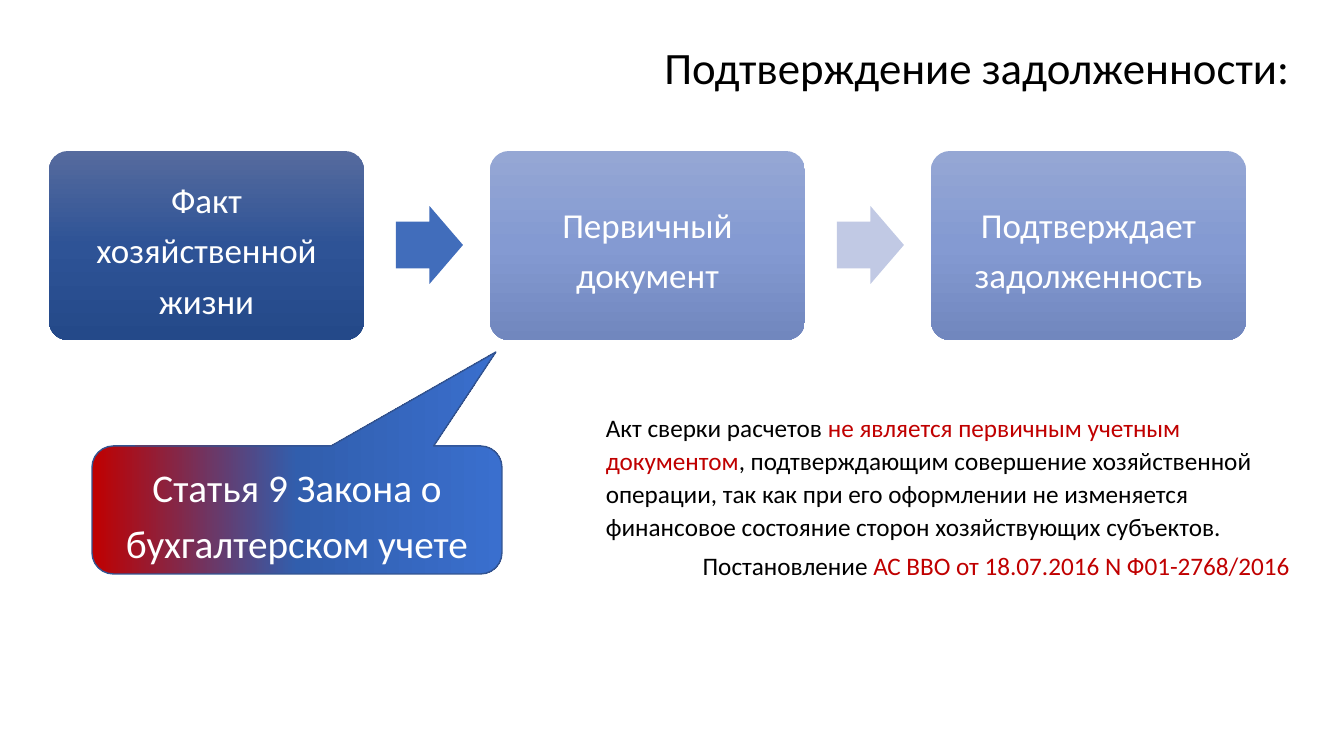
from copy import deepcopy
from pptx import Presentation
from pptx.dml.color import RGBColor as RGB
from pptx.enum.shapes import MSO_SHAPE as SHAPE
from pptx.enum.text import MSO_ANCHOR as ANCHOR, MSO_AUTO_SIZE as AUTO, PP_ALIGN as ALIGN
from pptx.oxml.ns import qn
from pptx.util import Pt

PX = 914400 / 100.8
FONT = "Calibri"
BLACK = RGB(0, 0, 0)
WHITE = RGB(255, 255, 255)
RED = RGB(0xC0, 0, 0)
EDGE = RGB(0x32, 0x54, 0x91)
DARK = [RGB(0x56, 0x6B, 0x9E), RGB(0x2E, 0x53, 0x96), RGB(0x24, 0x49, 0x89)]
PALE = [RGB(0x95, 0xA7, 0xD4), RGB(0x84, 0x9A, 0xD2), RGB(0x71, 0x87, 0xBE)]
FLAME = [RED, RGB(0x31, 0x5E, 0xAD), RGB(0x3A, 0x6F, 0xCE)]
BLUE = RGB(0x41, 0x6D, 0xBB)
MIST = RGB(0xC1, 0xC9, 0xE4)

STEPS = [("Факт хозяйственной жизни", DARK),
         ("Первичный документ", PALE),
         ("Подтверждает задолженность", PALE)]
RULING = [("Акт сверки расчетов ", BLACK),
          ("не является первичным учетным документом", RED),
          (", подтверждающим совершение хозяйственной операции, так как при его "
           "оформлении не изменяется финансовое состояние сторон хозяйствующих "
           "субъектов.", BLACK)]
SOURCE = [("Постановление ", BLACK),
          ("АС ВВО от 18.07.2016 N Ф01-2768/2016", RED)]


def emu(*sizes):
    return [round(size * PX) for size in sizes]


def style(run, size, color):
    run.font.name = FONT
    run.font.size = Pt(size)
    run.font.color.rgb = color


def label(shape, text, size, color, align, space):
    frame = shape.text_frame
    frame.word_wrap = True
    frame.auto_size = AUTO.NONE
    frame.vertical_anchor = ANCHOR.MIDDLE
    frame.text = text
    par = frame.paragraphs[0]
    par.alignment = align
    par.line_spacing = space
    style(par.runs[0], size, color)


def add_form(slide, kind, box, adjust):
    shape = slide.shapes.add_shape(kind, *emu(*box))
    shape.shadow.inherit = False
    shape.line.fill.background()
    for i, value in enumerate(adjust):
        shape.adjustments[i] = value
    return shape


def blend(shape, colors, angle):
    """Fill with evenly spaced colour stops."""
    fill = shape.fill
    fill.gradient()
    fill.gradient_angle = angle
    stops = shape.element.spPr.find(qn("a:gradFill")).find(qn("a:gsLst"))
    stops.append(deepcopy(stops[-1]))
    for i, (stop, color) in enumerate(zip(fill.gradient_stops, colors)):
        stop.position = i / (len(colors) - 1)
        stop.color.rgb = color


def add_title(slide, box):
    title = slide.shapes.title
    title.left, title.top, title.width, title.height = emu(*box)
    label(title, "Подтверждение задолженности:", 32, BLACK, ALIGN.RIGHT, 0.9)


def add_flow(slide, box):
    left, top, width, height = box
    card = 315
    pitch = (width - card) // (len(STEPS) - 1)
    for i, (text, colors) in enumerate(STEPS):
        x = left + i * pitch
        step = add_form(slide, SHAPE.ROUNDED_RECTANGLE, (x, top, card, height), [0.1])
        blend(step, colors, 270)
        label(step, text, 25, WHITE, ALIGN.CENTER, 1.2)
    # Arrows between the steps
    for i, color in enumerate([BLUE, MIST]):
        x = left + i * pitch + card + 32
        arrow = add_form(slide, SHAPE.RIGHT_ARROW,
                         (x, top + (height - 78) // 2, 67, 78), [0.6, 0.5])
        arrow.fill.solid()
        arrow.fill.fore_color.rgb = color


def add_ruling(slide, box):
    frame = slide.shapes.add_textbox(*emu(*box)).text_frame
    frame.word_wrap = True
    frame.auto_size = AUTO.SHAPE_TO_FIT_TEXT
    body, source = frame.paragraphs[0], frame.add_paragraph()
    body.line_spacing = 1.1
    source.alignment = ALIGN.RIGHT
    source.space_before = Pt(6)
    for par, parts in ((body, RULING), (source, SOURCE)):
        for text, color in parts:
            run = par.add_run()
            run.text = text
            style(run, 18, color)


def add_callout(slide, box):
    note = add_form(slide, SHAPE.ROUNDED_RECTANGULAR_CALLOUT, box, [0.485, -1.234, 0.167])
    blend(note, FLAME, 0)
    note.line.color.rgb = EDGE
    note.line.width = Pt(1)
    label(note, "Статья 9 Закона о бухгалтерском учете", 28, WHITE, ALIGN.CENTER, 1.2)


def main():
    deck = Presentation()
    deck.slide_width, deck.slide_height = emu(1344, 756)
    slide = deck.slides.add_slide(deck.slide_layouts[5])
    add_title(slide, (322, 36, 978, 68))
    add_flow(slide, (49, 151, 1197, 189))
    add_ruling(slide, (596, 404, 704, 217))
    add_callout(slide, (92, 446, 410, 128))
    deck.save("out.pptx")


if __name__ == "__main__":
    main()
